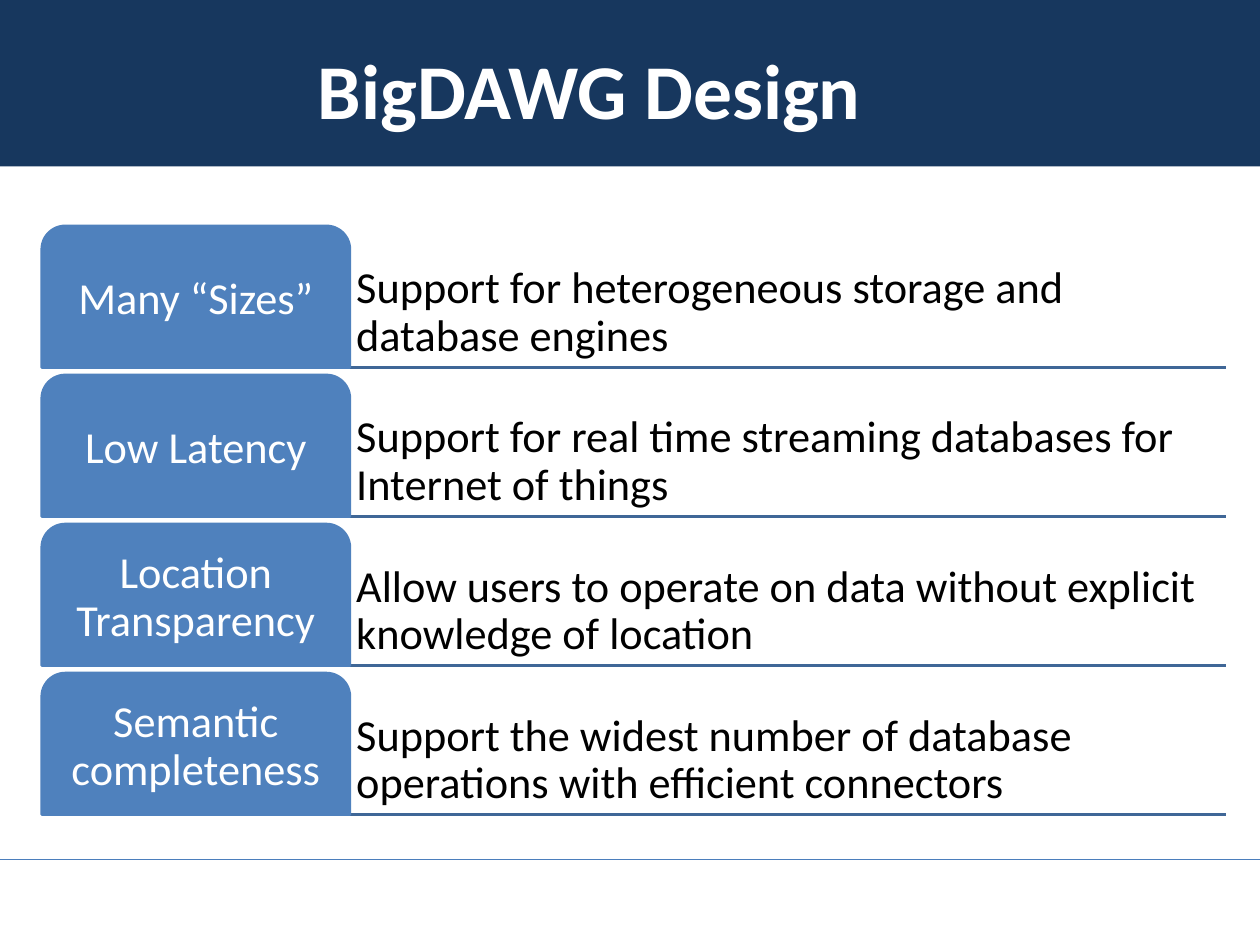
from lxml import etree
from pptx import Presentation
from pptx.dml.color import RGBColor
from pptx.enum.shapes import MSO_CONNECTOR, MSO_SHAPE
from pptx.enum.text import MSO_ANCHOR, PP_ALIGN
from pptx.oxml.ns import qn
from pptx.util import Inches, Pt

WIDTH, HEIGHT = 14.22, 10.67
FONT = "Calibri"
NAVY, BLUE, RULE_BLUE, FOOTER_BLUE = "17375E", "4F81BD", "3F6797", "4B7EBC"
WHITE, BLACK = "FFFFFF", "000000"

# Grid of the goals: a tab column, a text column and evenly spaced rows
LEFT, SPLIT, RIGHT = 0.47, 3.95, 13.84
FIRST_ROW, ROW_PITCH, ROW_HEIGHT = 2.55, 1.683, 1.6

GOALS = [
    ("Many “Sizes”", "Support for heterogeneous storage and database engines"),
    ("Low Latency", "Support for real time streaming databases for Internet of things"),
    ("Location Transparency",
     "Allow users to operate on data without explicit knowledge of location"),
    ("Semantic completeness",
     "Support the widest number of database operations with efficient connectors"),
]


def color(value):
    return RGBColor.from_string(value)


def add_block(page, preset, left, top, width, height, fill):
    block = page.shapes.add_shape(
        preset, Inches(left), Inches(top), Inches(width), Inches(height))
    block.shadow.inherit = False
    block.fill.solid()
    block.fill.fore_color.rgb = color(fill)
    block.line.fill.background()
    return block


def add_rule(page, left, right, y, stroke, weight):
    rule = page.shapes.add_connector(
        MSO_CONNECTOR.STRAIGHT, Inches(left), Inches(y), Inches(right), Inches(y))
    rule.line.color.rgb = color(stroke)
    rule.line.width = Pt(weight)
    etree.SubElement(rule._element.spPr, qn("a:effectLst"))


def add_text_box(page, left, top, width, height):
    return page.shapes.add_textbox(
        Inches(left), Inches(top), Inches(width), Inches(height))


def write(box, text, size, ink, anchor, align, inset=0.07, spacing=0.9, bold=False):
    frame = box.text_frame
    frame.word_wrap = True
    frame.vertical_anchor = anchor
    frame.margin_left = frame.margin_right = Inches(inset)
    frame.margin_top = frame.margin_bottom = Inches(0.07)
    para = frame.paragraphs[0]
    para.text = text
    para.alignment = align
    para.line_spacing = spacing
    para.font.name = FONT
    para.font.size = Pt(size)
    para.font.bold = bold
    para.font.color.rgb = color(ink)


def add_header(page, title):
    add_block(page, MSO_SHAPE.RECTANGLE, 0, 0, WIDTH, 1.88, NAVY)
    box = add_text_box(page, 0.25, 0.11, 12.8, 1.78)
    write(box, title, 63, WHITE, MSO_ANCHOR.MIDDLE, PP_ALIGN.CENTER,
          inset=0.14, spacing=1.0, bold=True)


def add_goal(page, row, name, description):
    top = FIRST_ROW + row * ROW_PITCH
    add_rule(page, LEFT, RIGHT, top + ROW_HEIGHT, RULE_BLUE, 2)
    box = add_text_box(page, SPLIT, top, RIGHT - SPLIT, ROW_HEIGHT)
    write(box, description, 36, BLACK, MSO_ANCHOR.BOTTOM, PP_ALIGN.LEFT)
    tab = add_block(page, MSO_SHAPE.ROUND_2_SAME_RECTANGLE,
                    LEFT, top, SPLIT - LEFT, ROW_HEIGHT, BLUE)
    tab.line.color.rgb = color(BLUE)
    tab.line.width = Pt(2)
    write(tab, name, 36, WHITE, MSO_ANCHOR.MIDDLE, PP_ALIGN.CENTER)


def main():
    deck = Presentation()
    deck.slide_width, deck.slide_height = Inches(WIDTH), Inches(HEIGHT)
    page = deck.slides.add_slide(deck.slide_layouts[6])
    add_header(page, "BigDAWG Design")
    add_rule(page, 0, WIDTH, 0.91 * HEIGHT, FOOTER_BLUE, 0.75)
    for row, (name, description) in enumerate(GOALS):
        add_goal(page, row, name, description)
    deck.save("out.pptx")


if __name__ == "__main__":
    main()
